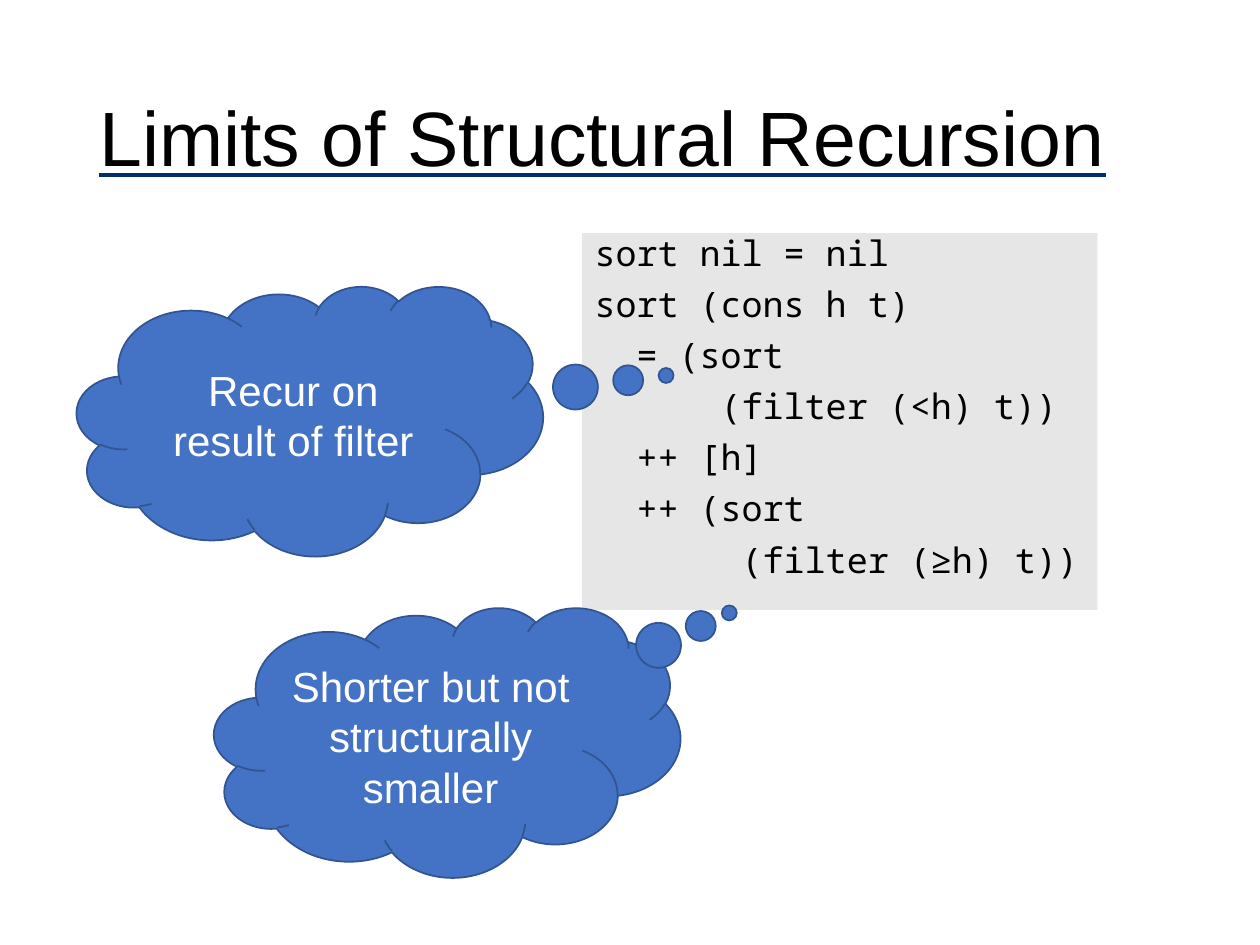
from lxml.etree import SubElement
from pptx import Presentation
from pptx.dml.color import RGBColor
from pptx.enum.shapes import MSO_SHAPE
from pptx.enum.text import MSO_ANCHOR, PP_ALIGN
from pptx.oxml.ns import qn
from pptx.util import Inches, Pt

COLORS = {
    "black": "000000",
    "white": "FFFFFF",
    "underline": "002F6C",
    "code_panel": "E7E6E6",
    "cloud": "4472C4",
    "cloud_line": "325491",
}
CODE = """sort nil = nil
sort (cons h t)
  = (sort
      (filter (<h) t))
  ++ [h]
  ++ (sort
       (filter (≥h) t))"""
# Text, left, top, and the tail offset from the cloud's centre
CLOUDS = [
    ("Recur on result of filter", 0.61, 2.27, 0.764, -0.168),
    ("Shorter but not structurally smaller", 1.7, 4.82, 0.605, -0.479),
]


def color(name):
    return RGBColor.from_string(COLORS[name])


def add_run(paragraph, text, size, color_name, font_name="Arial"):
    run = paragraph.add_run()
    run.text = text
    run.font.size = Pt(size)
    run.font.color.rgb = color(color_name)
    run.font.name = font_name
    return run


presentation = Presentation()
presentation.slide_width = Inches(10)
presentation.slide_height = Inches(7.5)
slide = presentation.slides.add_slide(presentation.slide_layouts[6])

# Title with a coloured underline
title = slide.shapes.add_textbox(Inches(0.69), Inches(0.4), Inches(8.62), Inches(1.45))
title.text_frame.word_wrap = True
title.text_frame.vertical_anchor = MSO_ANCHOR.MIDDLE
paragraph = title.text_frame.paragraphs[0]
paragraph.line_spacing = 0.9
run = add_run(paragraph, "Limits of Structural Recursion", 44, "black")
run.font.underline = True
underline_fill = SubElement(run.font.fill._xPr, qn("a:uFill"))
solid_fill = SubElement(underline_fill, qn("a:solidFill"))
SubElement(solid_fill, qn("a:srgbClr"), val=COLORS["underline"])
run.font.fill._xPr.find(qn("a:latin")).addprevious(underline_fill)

# Code panel
panel = slide.shapes.add_shape(
    MSO_SHAPE.RECTANGLE, Inches(4.62), Inches(1.85), Inches(4.09), Inches(2.99))
panel.shadow.inherit = False
panel.fill.solid()
panel.fill.fore_color.rgb = color("code_panel")
panel.line.fill.background()
frame = panel.text_frame
frame.word_wrap = True
frame.vertical_anchor = MSO_ANCHOR.TOP
for index, line in enumerate(CODE.splitlines()):
    paragraph = frame.add_paragraph() if index else frame.paragraphs[0]
    paragraph.alignment = PP_ALIGN.LEFT
    paragraph.line_spacing = 0.8
    paragraph.space_before = Pt(10 if index else 0)
    add_run(paragraph, line, 20, "black", "Noto Sans Mono")

# Thought clouds pointing at the code
for text, left, top, tail_x, tail_y in CLOUDS:
    cloud = slide.shapes.add_shape(
        MSO_SHAPE.CLOUD_CALLOUT, Inches(left), Inches(top), Inches(3.7), Inches(2.14))
    cloud.adjustments[0] = tail_x
    cloud.adjustments[1] = tail_y
    cloud.shadow.inherit = False
    cloud.fill.solid()
    cloud.fill.fore_color.rgb = color("cloud")
    cloud.line.color.rgb = color("cloud_line")
    cloud.line.width = Pt(1)
    cloud.text_frame.word_wrap = True
    cloud.text_frame.vertical_anchor = MSO_ANCHOR.MIDDLE
    paragraph = cloud.text_frame.paragraphs[0]
    paragraph.alignment = PP_ALIGN.CENTER
    add_run(paragraph, text, 24, "white")

presentation.save("out.pptx")
